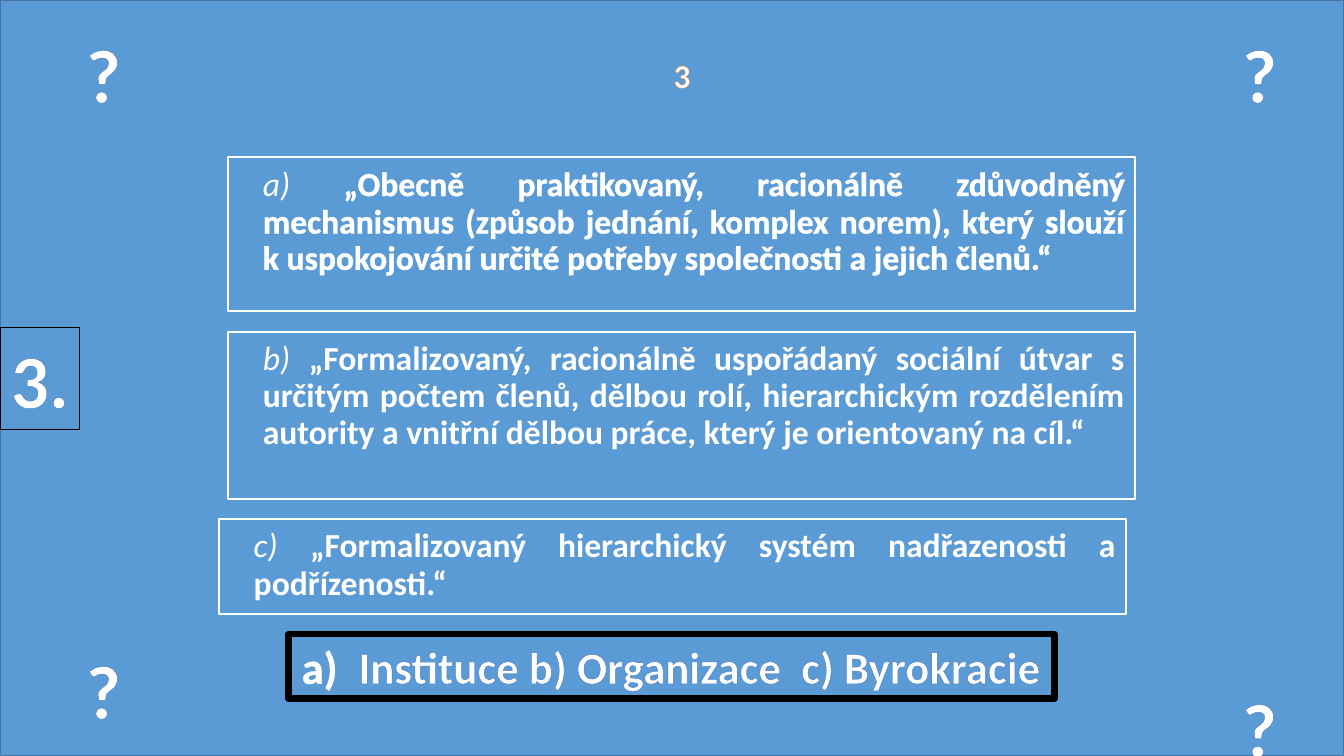
from typing import NamedTuple

from lxml.etree import SubElement
from pptx import Presentation
from pptx.dml.color import RGBColor
from pptx.enum.shapes import MSO_SHAPE as Shape
from pptx.enum.text import MSO_ANCHOR as Anchor, MSO_AUTO_SIZE as AutoSize, PP_ALIGN as Align
from pptx.oxml.ns import qn
from pptx.util import Pt

WIDTH, HEIGHT = 960, 540
BLUE, WHITE, BLACK = "5B9BD5", "FFFFFF", "000000"
INDIGO, ORANGE = "4472C4", "ED7D31"


class Box(NamedTuple):
    left: float
    top: float
    width: float
    height: float


class Definition(NamedTuple):
    box: Box
    label: str
    text: str
    outline: tuple[str, float] | None = None


QUESTION_MARKS = [Box(left, top, 39.6, 72.7)
                  for left, top in ((54, 15.8), (879.8, 15.8), (54, 455.8), (879.8, 483.1))]

DEFINITIONS = [
    Definition(Box(162.7, 112.3, 648, 110.2), "a) ",
               "„Obecně praktikovaný, racionálně zdůvodněný mechanismus (způsob jednání, "
               "komplex norem), který slouží k uspokojování určité potřeby společnosti "
               "a jejich členů.“", (WHITE, 1.45)),
    Definition(Box(162.7, 236.9, 648, 119.5), "b) ",
               "„Formalizovaný, racionálně uspořádaný sociální útvar s určitým počtem členů, "
               "dělbou rolí, hierarchickým rozdělením autority a vnitřní dělbou práce, "
               "který je orientovaný na cíl.“"),
    Definition(Box(156.2, 370.8, 648, 67.7), "c) ",
               "„Formalizovaný hierarchický systém nadřazenosti a podřízenosti.“"),
]


def rgb(color: str) -> RGBColor:
    return RGBColor.from_string(color)


def add_text(p, text: str, *, size: float, bold: bool = False, italic: bool = False,
             outline: tuple[str, float] | None = None) -> None:
    r = p.add_run()
    r.text = text
    f = r.font
    f.name, f.size, f.bold, f.italic = "Calibri", Pt(size), bold, italic
    f.color.rgb = rgb(WHITE)
    if outline:
        color, width = outline
        props = r._r.get_or_add_rPr()
        ln = SubElement(props, qn("a:ln"), w=str(Pt(width)))
        fill = SubElement(ln, qn("a:solidFill"))
        SubElement(fill, qn("a:srgbClr"), val=color)
        props.insert(0, ln)


def set_indent(p, left: float, first: float) -> None:
    props = p._p.get_or_add_pPr()
    props.set("marL", str(Pt(left)))
    props.set("indent", str(Pt(first)))


def format_frame(tf, align: Align, wrap: bool):
    """Anchor the frame at the top and return its first paragraph, aligned."""
    tf.auto_size, tf.word_wrap, tf.vertical_anchor = AutoSize.NONE, wrap, Anchor.TOP
    p = tf.paragraphs[0]
    p.alignment = align
    return p


def add_box(s, box: Box, line: str, width: float, fill: str | None = None):
    sp = s.shapes.add_shape(Shape.RECTANGLE, *map(Pt, box))
    sp.shadow.inherit = False
    if fill:
        sp.fill.solid()
        sp.fill.fore_color.rgb = rgb(fill)
    else:
        sp.fill.background()
    sp.line.color.rgb = rgb(line)
    sp.line.width = Pt(width)
    return sp


def add_title(s, box: Box, text: str) -> None:
    sp = s.shapes.title
    sp.left, sp.top, sp.width, sp.height = map(Pt, box)
    p = format_frame(sp.text_frame, Align.CENTER, False)
    add_text(p, text, size=24, bold=True, outline=(ORANGE, 0.52))
    s.shapes._spTree.append(sp._element)  # bring in front of the backdrop


def add_question_mark(s, box: Box) -> None:
    sp = s.shapes.add_textbox(*map(Pt, box))
    p = format_frame(sp.text_frame, Align.CENTER, False)
    add_text(p, "?", size=54, bold=True, outline=(INDIGO, 0.8))


def add_number(s, box: Box, text: str) -> None:
    sp = add_box(s, box, BLACK, 0.75)
    p = format_frame(sp.text_frame, Align.CENTER, False)
    add_text(p, text, size=54, bold=True, outline=(INDIGO, 0.8))


def add_answers(s, box: Box, text: str) -> None:
    sp = add_box(s, box, BLACK, 4.5)
    p = format_frame(sp.text_frame, Align.CENTER, False)
    set_indent(p, 40.5, -40.5)
    SubElement(p._p.get_or_add_pPr(), qn("a:buAutoNum"), type="alphaLcParenR")
    add_text(p, text, size=32, bold=True, outline=(INDIGO, 0.8))


def add_definition(s, d: Definition) -> None:
    sp = add_box(s, d.box, WHITE, 1.5, BLUE)
    p = format_frame(sp.text_frame, Align.JUSTIFY, True)
    p.line_spacing, p.space_before = 0.9, Pt(10)
    set_indent(p, 18, -18)
    add_text(p, "\t", size=28, italic=True)
    add_text(p, d.label, size=24, italic=True)
    add_text(p, d.text, size=24, bold=True, outline=d.outline)


def main() -> None:
    prs = Presentation()
    prs.slide_width, prs.slide_height = Pt(WIDTH), Pt(HEIGHT)
    s = prs.slides.add_slide(prs.slide_layouts[5])

    add_box(s, Box(0, 0, WIDTH, HEIGHT), "43739E", 1, BLUE)
    for box in QUESTION_MARKS:
        add_question_mark(s, box)
    add_number(s, Box(0, 234, 56.9, 72.7), "3.")
    add_answers(s, Box(206, 452.9, 547.2, 46.1), "Instituce b) Organizace  c) Byrokracie")
    add_title(s, Box(473.8, 35.3, 26.6, 36), "3")
    for definition in DEFINITIONS:
        add_definition(s, definition)

    prs.save("out.pptx")


if __name__ == "__main__":
    main()
